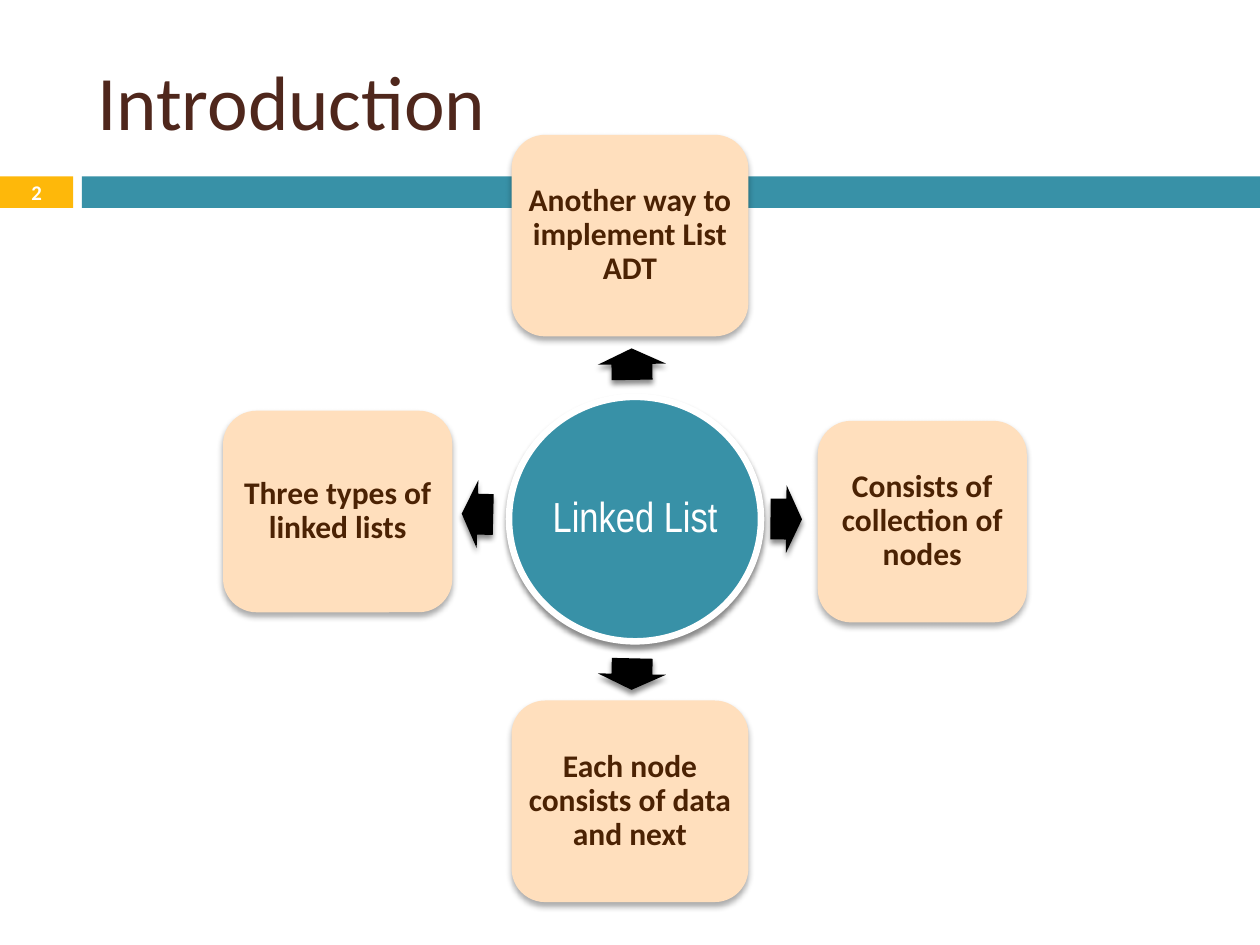
from lxml.etree import SubElement
from pptx import Presentation
from pptx.dml.color import RGBColor
from pptx.enum.shapes import MSO_SHAPE
from pptx.enum.text import MSO_ANCHOR, MSO_AUTO_SIZE, PP_ALIGN
from pptx.oxml.ns import qn
from pptx.util import Inches, Pt

TEAL = RGBColor(0x38, 0x91, 0xA7)
AMBER = RGBColor(0xFE, 0xB8, 0x0A)
PEACH = RGBColor(0xFF, 0xDF, 0xBD)
BROWN = RGBColor(0x4B, 0x22, 0x03)
TITLE_BROWN = RGBColor(0x4F, 0x27, 0x1C)
BLACK = RGBColor(0, 0, 0)
WHITE = RGBColor(0xFF, 0xFF, 0xFF)

COLUMNS, ROWS = 100, 75
BOX_HEIGHT = 16


def write_text(frame, text, size, color, font="Calibri", bold=False,
               align=PP_ALIGN.CENTER, inset=0.03, spacing=0.9):
    frame.word_wrap = True
    frame.auto_size = MSO_AUTO_SIZE.NONE
    frame.vertical_anchor = MSO_ANCHOR.MIDDLE
    frame.margin_left = frame.margin_right = Inches(inset)
    frame.margin_top = frame.margin_bottom = Inches(inset)
    para = frame.paragraphs[0]
    para.alignment = align
    para.line_spacing = spacing
    span = para.add_run()
    span.text = text
    span.font.name = font
    span.font.size = Pt(size)
    span.font.bold = bold
    span.font.color.rgb = color


class DiagramPage:
    """Holds the grid and the slide being built."""

    def __init__(self, deck):
        self.page = deck.slides.add_slide(deck.slide_layouts[5])
        self.column = deck.slide_width / COLUMNS
        self.row = deck.slide_height / ROWS

    def area(self, left, top, width, height):
        return (round(left * self.column), round(top * self.row),
                round(width * self.column), round(height * self.row))

    def title(self, text, *place):
        holder = self.page.shapes.title
        holder.left, holder.top, holder.width, holder.height = self.area(*place)
        write_text(holder.text_frame, text, size=44, color=TITLE_BROWN,
                   align=PP_ALIGN.LEFT, inset=0.1, spacing=1)

    def shape(self, kind, fill, *place):
        shape = self.page.shapes.add_shape(kind, *self.area(*place))
        shape.shadow.inherit = False
        shape.fill.solid()
        shape.fill.fore_color.rgb = fill
        shape.line.fill.background()
        return shape

    def shadow(self, shape, opacity, blur, distance):
        effects = shape._element.spPr.find(qn("a:effectLst"))
        outer = SubElement(effects, qn("a:outerShdw"), blurRad=str(Pt(blur)),
                           dist=str(Pt(distance)), dir="5400000", rotWithShape="0")
        color = SubElement(outer, qn("a:srgbClr"), val=str(BLACK))
        SubElement(color, qn("a:alpha"), val=str(opacity * 1000))

    def hub(self, text, *place):
        circle = self.shape(MSO_SHAPE.OVAL, TEAL, *place)
        circle.line.color.rgb = WHITE
        circle.line.width = Pt(3.75)
        self.shadow(circle, 45, 3, 2.4)
        write_text(circle.text_frame, text, size=24, color=WHITE, font="Arial Narrow")

    def arrow(self, center_x, center_y, angle):
        width, height = 2.5, 5.4
        arrow = self.shape(MSO_SHAPE.RIGHT_ARROW, BLACK, center_x - width / 2,
                           center_y - height / 2, width, height)
        arrow.adjustments[0], arrow.adjustments[1] = 0.6, 0.5
        arrow.rotation = angle
        self.shadow(arrow, 45, 3, 2.4)

    def box(self, text, kind, left, top, width):
        box = self.shape(kind, PEACH, left, top, width, BOX_HEIGHT)
        self.shadow(box, 32, 3.5, 2.2)
        write_text(box.text_frame, text, size=18, color=BROWN, bold=True)


def main():
    deck = Presentation()
    deck.slide_width, deck.slide_height = Inches(10), Inches(7.5)
    diagram = DiagramPage(deck)

    # Title, band and slide number
    number = diagram.shape(MSO_SHAPE.RECTANGLE, AMBER, 0, 14, 5.8, 2.5)
    write_text(number.text_frame, "2", size=11.9, color=WHITE, bold=True,
               inset=0, spacing=1)
    diagram.shape(MSO_SHAPE.RECTANGLE, TEAL, 6.5, 14, 93.5, 2.5)
    diagram.title("Introduction", 6.7, 2.5, 89.2, 10.8)

    # Hub
    diagram.hub("Linked List", 40.4, 31.5, 20, 19.4)

    # Arrows: centre and angle
    for center_x, center_y, angle in [(50.15, 28.9, 269), (62.4, 41.2, 0.6),
                                      (50.15, 53.5, 91.2), (37.9, 40.8, 181.4)]:
        diagram.arrow(center_x, center_y, angle)

    # Boxes: text, kind, left, top and width
    soft, rounded = MSO_SHAPE.FLOWCHART_ALTERNATE_PROCESS, MSO_SHAPE.ROUNDED_RECTANGLE
    for text, kind, left, top, width in [
        ("Another way to implement List ADT", soft, 40.6, 10.7, 18.8),
        ("Consists of collection of nodes", soft, 64.9, 33.4, 16.6),
        ("Each node consists of data and next", rounded, 40.6, 55.6, 18.8),
        ("Three types of linked lists", rounded, 17.7, 32.6, 18.2),
    ]:
        diagram.box(text, kind, left, top, width)

    deck.save("out.pptx")


if __name__ == "__main__":
    main()
